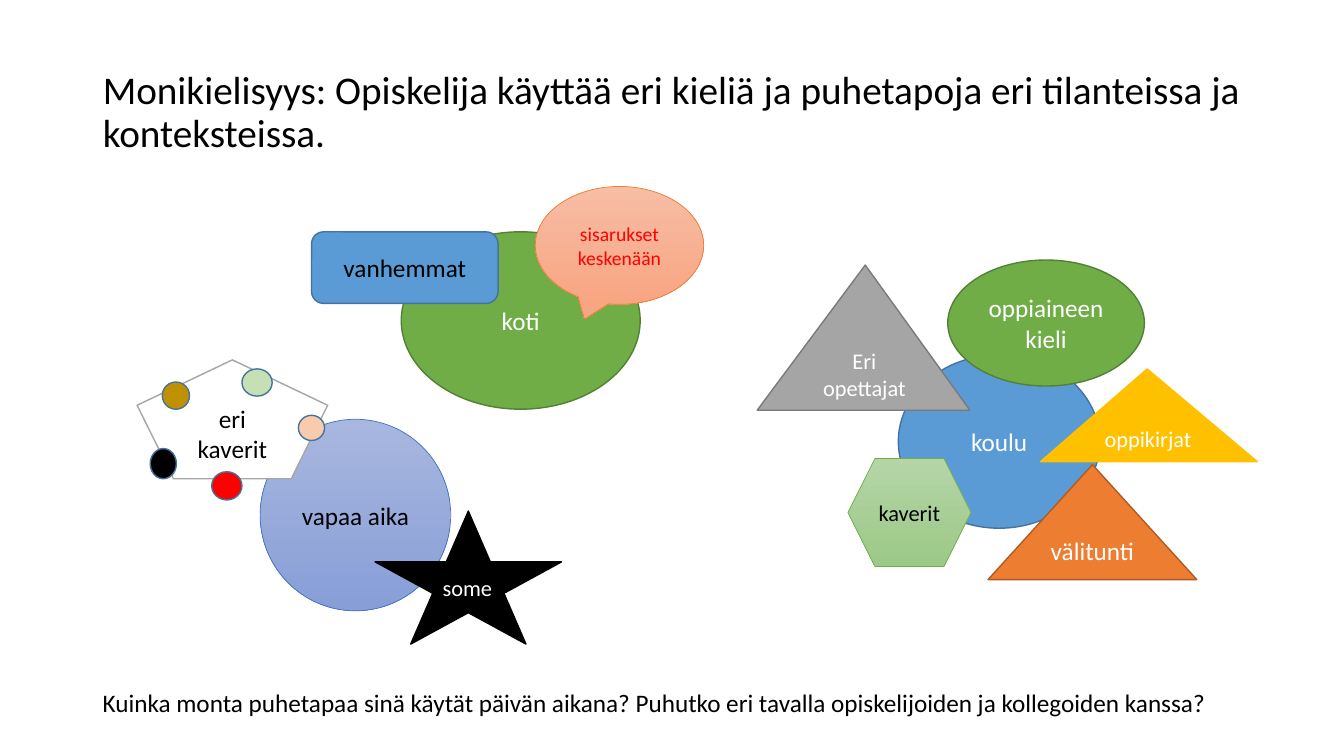
from pptx import Presentation
from pptx import util as u
from pptx.dml import color
from pptx.enum import shapes, text

KIND = shapes.MSO_SHAPE
CENTER, LEFT = text.PP_ALIGN.CENTER, text.PP_ALIGN.LEFT
MIDDLE, TOP = text.MSO_ANCHOR.MIDDLE, text.MSO_ANCHOR.TOP


def rgb(value):
    return color.RGBColor.from_string(value)


def write(box, words, size, tint, align=CENTER, anchor=MIDDLE):
    frame = box.text_frame
    frame.word_wrap = True
    frame.auto_size = text.MSO_AUTO_SIZE.NONE
    frame.vertical_anchor = anchor
    para = frame.paragraphs[0]
    para.alignment = align
    span = para.add_run()
    span.text = words
    span.font.name = "Calibri"
    span.font.size = u.Pt(size)
    span.font.color.rgb = rgb(tint)
    return para


deck = Presentation()
deck.slide_width, deck.slide_height = u.Inches(13.33), u.Inches(7.5)
page = deck.slides.add_slide(deck.slide_layouts[5])

title = page.shapes.title
title.left, title.top = u.Inches(0.92), u.Inches(0.4)
title.width, title.height = u.Inches(11.5), u.Inches(1.45)
heading = write(
    title,
    "Monikielisyys: Opiskelija käyttää eri kieliä ja puhetapoja eri tilanteissa ja konteksteissa.",
    28, "000000", LEFT)
heading.line_spacing = 0.9

WHITE, BLACK, RED = "FFFFFF", "000000", "FF0000"
GREEN, BLUE, BLUE_EDGE, GREEN_EDGE = "70AD47", "5B9BD5", "43739E", "538035"

# kind, place, fill (two colours make a gradient), edge, edge width, words, size, text colour
figures = [
    (KIND.OVAL, (3.98, 2.3, 2.37, 1.76), [GREEN], GREEN_EDGE, 1, "koti", 18, WHITE),
    (KIND.OVAL, (8.91, 3.52, 2, 1.72), [BLUE], BLUE_EDGE, 1, "koulu", 18, WHITE),
    (KIND.ISOSCELES_TRIANGLE, (10.32, 3.66, 2.15, 0.92), ["FFC000"], "FFC000", 1, "oppikirjat", 16, WHITE),
    (KIND.ISOSCELES_TRIANGLE, (9.8, 4.61, 2.07, 1.14), ["ED7D31"], "AF5C24", 1, "välitunti", 18, WHITE),
    (KIND.ISOSCELES_TRIANGLE, (7.51, 2.63, 2.11, 1.44), ["A5A5A5"], "7A7A7A", 1, "Eri opettajat", 16, WHITE),
    (KIND.OVAL, (2.58, 4.16, 1.89, 1.9), ["A8B7DF", "889ED7"], "4472C4", 0.5, "vapaa aika", 18, BLACK),
    (KIND.STAR_5_POINT, (3.72, 5.07, 1.85, 1.32), [BLACK], BLACK, 1, "some", 16, WHITE),
    (KIND.HEXAGON, (8.41, 4.55, 1.22, 1.07), ["B5D5A7", "9CC987"], GREEN, 0.5, "kaverit", 16, BLACK),
    (KIND.REGULAR_PENTAGON, (1.36, 3.57, 1.89, 1.18), [WHITE], "A5A5A5", 1, "eri kaverit", 18, BLACK),
    (KIND.OVAL_CALLOUT, (5.31, 1.85, 1.67, 1.17), ["F7BDA5", "F8A582"], "ED7D31", 0.5,
     "sisarukset keskenään", 14, RED),
    (KIND.OVAL, (9.4, 2.58, 1.95, 1.25), [GREEN], GREEN_EDGE, 1, "oppiaineen kieli", 18, WHITE),
]
friends = [
    ((1.61, 3.79, 0.27, 0.27), "BF9000"),
    ((2.4, 3.66, 0.3, 0.27), "C5E0B4"),
    ((1.49, 4.45, 0.26, 0.3), BLACK),
    ((2.1, 4.68, 0.3, 0.28), RED),
    ((2.96, 4.12, 0.26, 0.25), "F8CBAD"),
]
for place, tint in friends:
    figures.append((KIND.OVAL, place, [tint], BLUE_EDGE, 1, "", 18, WHITE))
figures.append((KIND.ROUNDED_RECTANGLE, (3.09, 2.3, 1.85, 0.71), [BLUE], BLUE_EDGE, 1, "vanhemmat", 18, BLACK))

peaks = {"oppikirjat": 0.492, "Eri opettajat": 0.508}

for kind, place, tints, edge, weight, words, size, ink in figures:
    figure = page.shapes.add_shape(kind, *[u.Inches(length) for length in place])
    figure.shadow.inherit = False
    if len(tints) == 1:
        figure.fill.solid()
        figure.fill.fore_color.rgb = rgb(tints[0])
    else:
        figure.fill.gradient()
        figure.fill.gradient_angle = 270
        for stop, tint in zip(figure.fill.gradient_stops, tints):
            stop.color.rgb = rgb(tint)
    figure.line.color.rgb = rgb(edge)
    figure.line.width = u.Pt(weight)
    if words in peaks:
        figure.adjustments[0] = peaks[words]
    if words:
        write(figure, words, size, ink, LEFT if words == "some" else CENTER)

question = page.shapes.add_textbox(u.Inches(0.92), u.Inches(6.77), u.Inches(11.61), u.Inches(0.4))
write(
    question,
    "Kuinka monta puhetapaa sinä käytät päivän aikana? Puhutko eri tavalla opiskelijoiden ja kollegoiden kanssa?",
    18, BLACK, LEFT, TOP)

deck.save("out.pptx")
